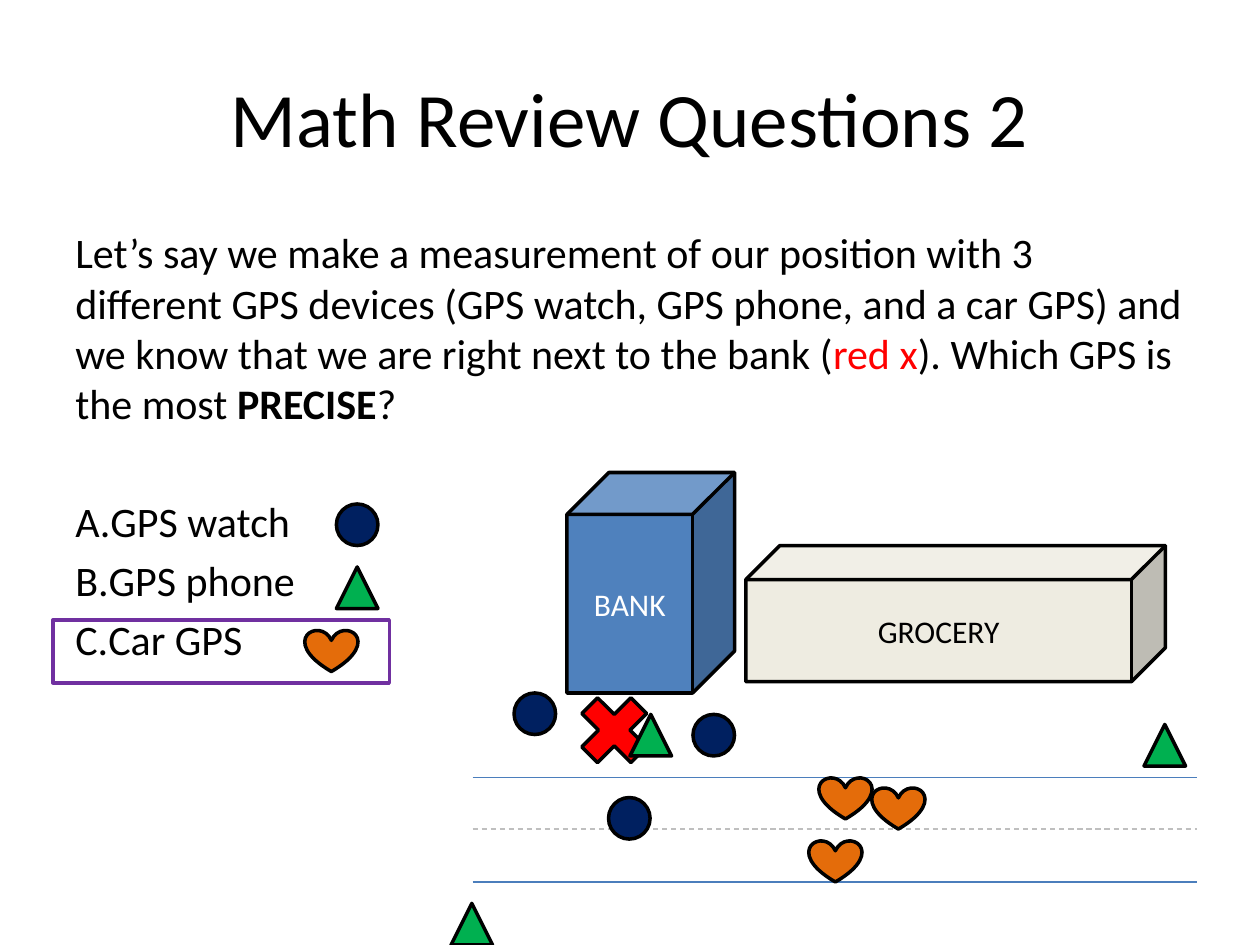
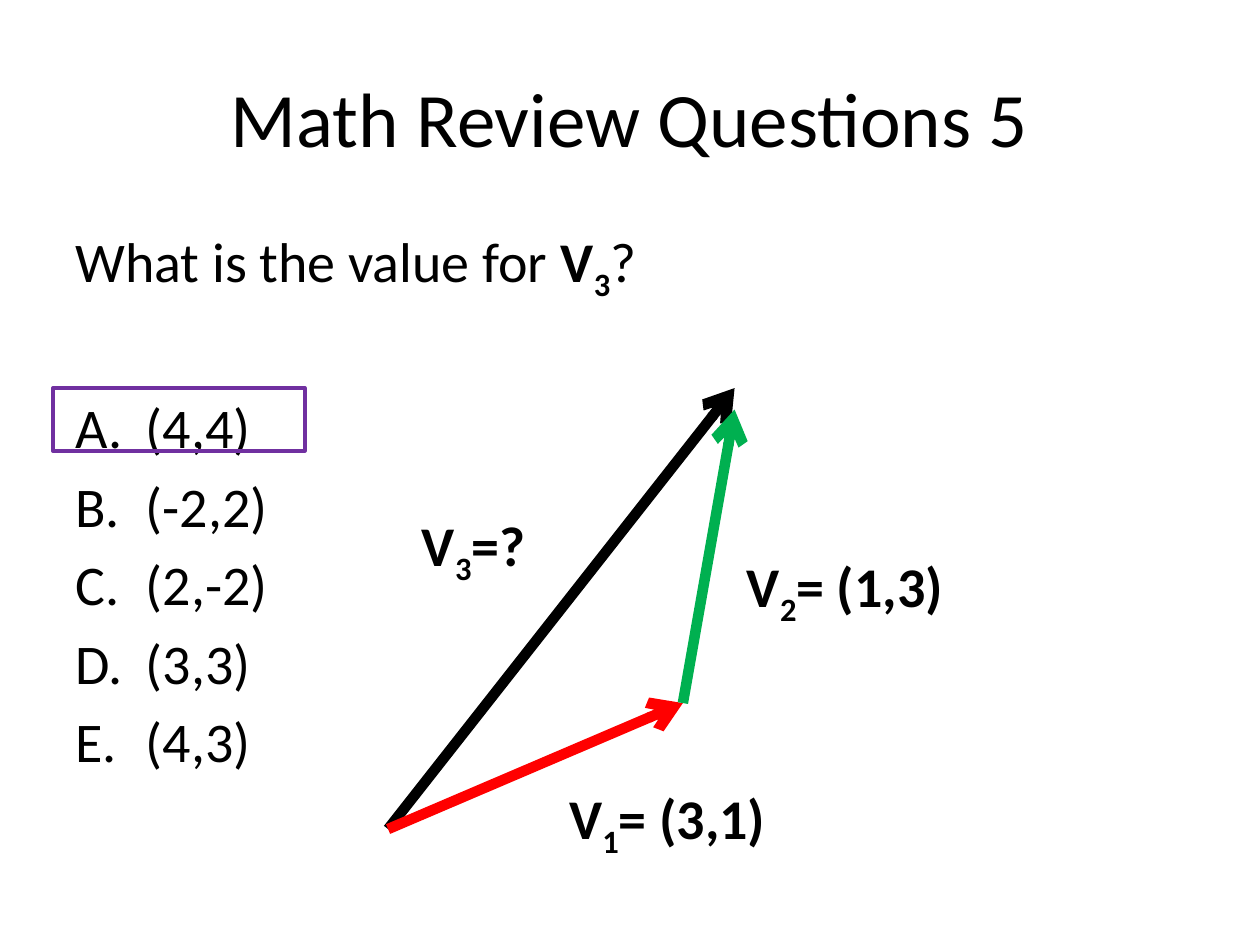
from lxml import etree
from pptx import Presentation
from pptx import util as u
from pptx.dml.color import RGBColor
from pptx.enum import dml, shapes, text
from pptx.oxml import ns

FONT = "Calibri"
BLACK, WHITE, RED, GREEN = "000000", "FFFFFF", "FF0000", "00B050"
NAVY, ORANGE, PURPLE = "002060", "E46C0A", "7030A0"
ROAD_EDGE, ROAD_CENTRE = "4B7EBC", "BFBFBF"
rgb = RGBColor.from_string
Preset = shapes.MSO_SHAPE


def write(paragraph, pieces, size):
    """Add runs given as (wording, colour, bold, subscript)."""
    for wording, colour, bold, subscript in pieces:
        run = paragraph.add_run()
        run.text = wording
        run.font.name, run.font.size, run.font.bold = FONT, u.Pt(size), bold
        run.font.color.rgb = rgb(colour)
        if subscript:
            run._r.get_or_add_rPr().set("baseline", "-25000")


def draw(slide, preset, left, top, width, height, fill=None, outline=BLACK):
    """Add an outlined shape; without a fill it stays open."""
    figure = slide.shapes.add_shape(preset, u.Inches(left), u.Inches(top),
                                    u.Inches(width), u.Inches(height))
    figure.shadow.inherit = False
    if fill:
        figure.fill.solid()
        figure.fill.fore_color.rgb = rgb(fill)
    else:
        figure.fill.background()
    figure.line.color.rgb = rgb(outline)
    figure.line.width = u.Pt(2)
    return figure


deck = Presentation()
deck.slide_width, deck.slide_height = u.Inches(10), u.Inches(7.5)
precision = deck.slides.add_slide(deck.slide_layouts[6])
vectors = deck.slides.add_slide(deck.slide_layouts[6])

# Titles, questions and lettered answers
gps_question = [
    ("Let’s say we make a measurement of our position with 3 different GPS devices "
     "(GPS watch, GPS phone, and a car GPS) and we know that we are right next to "
     "the bank (", BLACK, False, False),
    ("red x", RED, False, False),
    ("). Which GPS is the most ", BLACK, False, False),
    ("PRECISE", BLACK, True, False),
    ("?", BLACK, False, False),
]
vector_question = [
    ("What is the value for ", BLACK, False, False),
    ("V", BLACK, True, False),
    ("3", BLACK, True, True),
    ("?", BLACK, False, False),
]
for slide, number, question, answers, size, hang in (
        (precision, 2, gps_question, ["GPS watch", "GPS phone", "Car GPS"], 24, 0.12),
        (vectors, 5, vector_question,
         ["(4,4)", "(-2,2)", "(2,-2)", "(3,3)", "(4,3)"], 32, 0.56)):
    title = slide.shapes.add_textbox(u.Inches(0.5), u.Inches(0.3),
                                     u.Inches(9), u.Inches(1.25)).text_frame
    title.word_wrap = True
    title.vertical_anchor = text.MSO_ANCHOR.MIDDLE
    title.paragraphs[0].alignment = text.PP_ALIGN.CENTER
    write(title.paragraphs[0], [(f"Math Review Questions {number}", BLACK, False, False)], 44)

    body = slide.shapes.add_textbox(u.Inches(0.5), u.Inches(1.75),
                                    u.Inches(9), u.Inches(4.95)).text_frame
    body.word_wrap = True
    body.paragraphs[0].space_before = u.Pt(0.2 * size)
    write(body.paragraphs[0], question, size)
    for index, answer in enumerate(answers):
        option = body.add_paragraph()
        option.space_before = u.Pt((0.2 if index else 1.6) * size)
        write(option, [(answer, BLACK, False, False)], size)
        properties = option._p.get_or_add_pPr()
        properties.set("marL", str(u.Inches(hang)))
        properties.set("indent", str(-u.Inches(hang)))
        etree.SubElement(properties, ns.qn("a:buFont"), typeface="+mj-lt")
        etree.SubElement(properties, ns.qn("a:buAutoNum"), type="alphaUcPeriod")

# Road lines and vector arrows
origin, v1_tip, v2_tip, v3_tip = (3.08, 6.58), (5.42, 5.58), (5.83, 3.25), (5.83, 3.08)
for slide, start, end, colour, width, dashed, arrow in (
        (precision, (3.75, 6.17), (9.5, 6.17), ROAD_EDGE, 0.75, False, False),
        (precision, (3.75, 7), (9.5, 7), ROAD_EDGE, 0.75, False, False),
        (precision, (3.75, 6.58), (9.5, 6.58), ROAD_CENTRE, 0.75, True, False),
        (vectors, origin, v3_tip, BLACK, 6, False, True),
        (vectors, origin, v1_tip, RED, 6, False, True),
        (vectors, v1_tip, v2_tip, GREEN, 6, False, True)):
    stroke = slide.shapes.add_connector(shapes.MSO_CONNECTOR.STRAIGHT,
                                        *map(u.Inches, start + end))
    stroke.line.color.rgb = rgb(colour)
    stroke.line.width = u.Pt(width)
    if dashed:
        stroke.line.dash_style = dml.MSO_LINE.DASH
    if arrow:
        etree.SubElement(stroke.line._get_or_add_ln(), ns.qn("a:tailEnd"), type="arrow")
    etree.SubElement(stroke._element.spPr, ns.qn("a:effectLst"))

# Buildings
for name, left, top, width, height, fill, ink in (
        ("BANK", 4.5, 3.75, 1.33, 1.75, "4F81BD", WHITE),
        ("GROCERY", 5.92, 4.33, 3.33, 1.08, "EEECE1", BLACK)):
    building = draw(precision, Preset.CUBE, left, top, width, height, fill)
    building.text_frame.vertical_anchor = text.MSO_ANCHOR.MIDDLE
    sign = building.text_frame.paragraphs[0]
    sign.alignment = text.PP_ALIGN.CENTER
    write(sign, [(name, ink, False, False)], 18)

# True position, then each device's key symbol and three readings
draw(precision, Preset.MATH_MULTIPLY, 4.5, 5.42, 0.75, 0.75, RED)
for preset, fill, width, spots in (
        (Preset.OVAL, NAVY, 0.33, [(2.67, 4), (4.08, 5.5), (4.83, 6.33), (5.5, 5.67)]),
        (Preset.ISOSCELES_TRIANGLE, GREEN, 0.33,
         [(2.67, 4.5), (5, 5.67), (3.58, 7.17), (9.08, 5.75)]),
        (Preset.HEART, ORANGE, 0.42, [(2.42, 5), (6.92, 6.25), (6.42, 6.67), (6.5, 6.17)])):
    for left, top in spots:
        draw(precision, preset, left, top, width, 0.33, fill)

# Vector labels
for index, value, left, top, width in (("3", "=?", 3.25, 4, 1.05),
                                       ("2", "= (1,3)", 5.83, 4.33, 1.8),
                                       ("1", "= (3,1)", 4.42, 6.17, 1.8)):
    label = vectors.shapes.add_textbox(u.Inches(left), u.Inches(top),
                                       u.Inches(width), u.Inches(0.64)).text_frame
    label.word_wrap = False
    label.auto_size = text.MSO_AUTO_SIZE.SHAPE_TO_FIT_TEXT
    write(label.paragraphs[0], [("V", BLACK, True, False), (index, BLACK, True, True),
                                (value, BLACK, True, False)], 32)

# Frames around the right answers
for slide, top, width in ((precision, 4.92, 2.67), (vectors, 3.08, 2)):
    draw(slide, Preset.RECTANGLE, 0.42, top, width, 0.5, outline=PURPLE)

deck.save("out.pptx")
